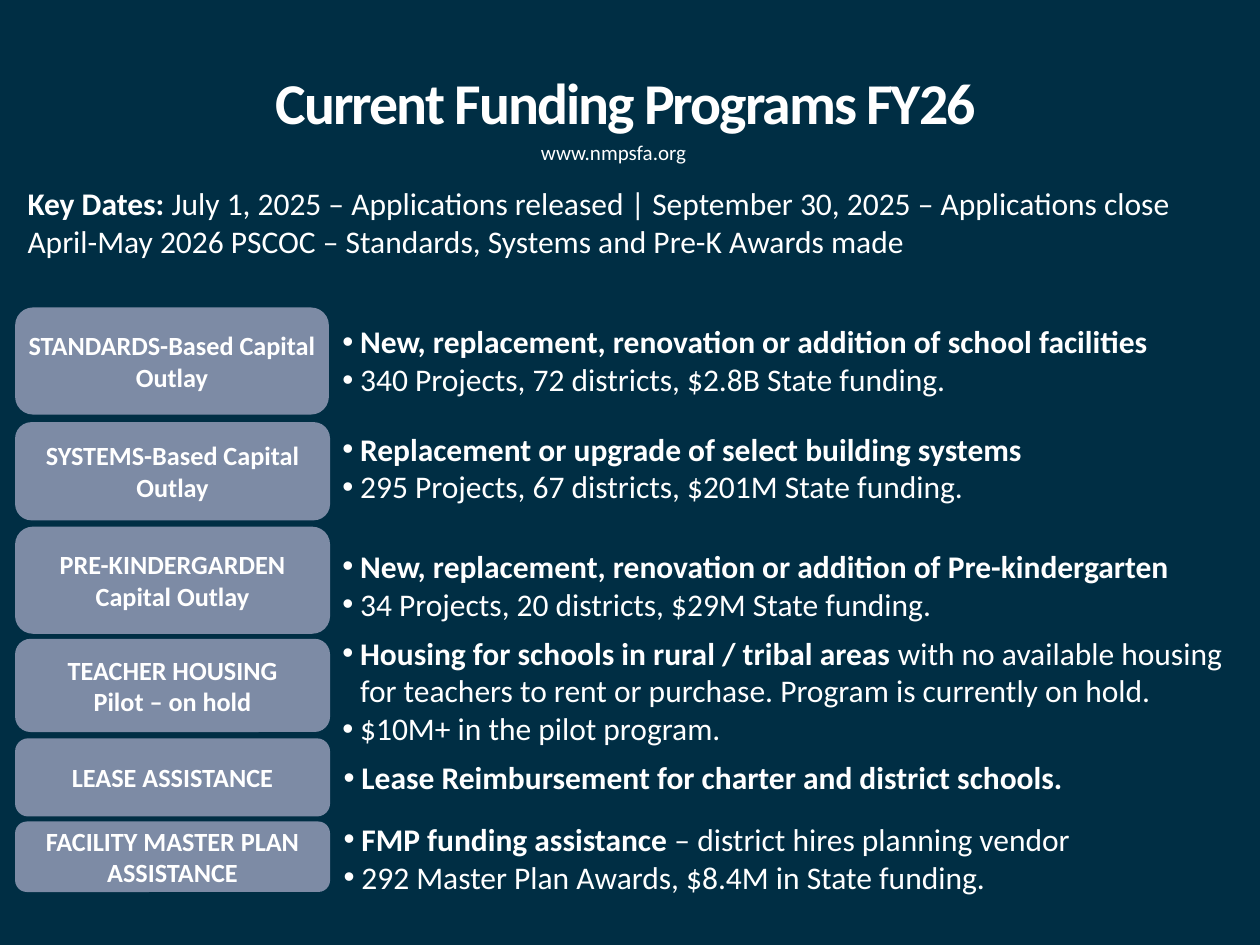
from lxml import etree
from pptx import Presentation
from pptx import util as u
from pptx.dml.color import RGBColor
from pptx.enum import shapes, text
from pptx.oxml.ns import qn

NAVY = RGBColor(0x00, 0x2E, 0x44)
SLATE = RGBColor(0x7D, 0x8B, 0xA5)
WHITE = RGBColor(0xFF, 0xFF, 0xFF)

CENTER = text.PP_ALIGN.CENTER
MIDDLE = text.MSO_ANCHOR.MIDDLE


def write(frame, paragraphs, size, align=None, bullet=False):
    """Fill a frame; each paragraph is a (bold text, regular text) pair."""
    frame.word_wrap = True
    for number, parts in enumerate(paragraphs):
        para = frame.paragraphs[0] if number == 0 else frame.add_paragraph()
        para.alignment = align
        if bullet:
            props = para._p.get_or_add_pPr()
            props.set("marL", str(u.Inches(0.14)))
            props.set("indent", str(u.Inches(-0.14)))
            color = etree.SubElement(props, qn("a:buClr"))
            etree.SubElement(color, qn("a:srgbClr")).set("val", str(WHITE))
            etree.SubElement(props, qn("a:buFont")).set("typeface", "Arial")
            etree.SubElement(props, qn("a:buChar")).set("char", "•")
        for words, bold in zip(parts, (True, False)):
            if not words:
                continue
            run = para.add_run()
            run.text = words
            style = {"name": "Calibri", "size": u.Pt(size), "bold": bold}
            for key, value in style.items():
                setattr(run.font, key, value)
            run.font.color.rgb = WHITE


def add_text(left, top, width, height, paragraphs, size, **layout):
    box = slide.shapes.add_textbox(*map(u.Inches, (left, top, width, height)))
    write(box.text_frame, paragraphs, size, **layout)
    return box.text_frame


deck = Presentation()
deck.slide_width, deck.slide_height = u.Inches(10), u.Inches(7.5)
slide = deck.slides.add_slide(deck.slide_layouts[6])
slide.background.fill.solid()
slide.background.fill.fore_color.rgb = NAVY

# Title, tightly tracked
title = add_text(0.7, 0.23, 8.63, 1.22, [("Current Funding Programs FY26", "")], 33, align=CENTER)
title.vertical_anchor = MIDDLE
title.margin_left = 0
title.paragraphs[0].line_spacing = 0.9
title.paragraphs[0].runs[0].font._element.set("spc", "-110")

# Web address and key dates
add_text(2.82, 1.06, 4.1, 0.3, [("", "www.nmpsfa.org")], 12, align=CENTER)
add_text(0.12, 1.41, 9.79, 0.71, [
    ("Key Dates: ", "July 1, 2025 – Applications released | September 30, 2025 – Applications close"),
    ("", "April-May 2026 PSCOC – Standards, Systems and Pre-K Awards made"),
], 18)

# Programs: label lines, label (top, width, height), details (left, top, width, height), bullets
programs = [
    (["STANDARDS-Based Capital Outlay"], (2.44, 2.49, 0.85), (2.62, 2.51, 7.06, 0.71),
     [("New, replacement, renovation or addition of school facilities", ""),
      ("", "340 Projects, 72 districts, $2.8B State funding.")]),
    (["SYSTEMS-Based Capital Outlay"], (3.35, 2.5, 0.78), (2.62, 3.36, 7.06, 0.91),
     [("Replacement or upgrade of select building systems", ""),
      ("", "295 Projects, 67 districts, $201M State funding.")]),
    (["PRE-KINDERGARDEN Capital Outlay"], (4.18, 2.5, 0.85), (2.62, 4.29, 7.06, 0.71),
     [("New, replacement, renovation or addition of Pre-kindergarten", ""),
      ("", "34 Projects, 20 districts, $29M State funding.")]),
    (["TEACHER HOUSING", "Pilot – on hold"], (5.07, 2.5, 0.74), (2.62, 4.98, 7.3, 1.01),
     [("Housing for schools in rural / tribal areas ",
       "with no available housing for teachers to rent or purchase. Program is currently on hold."),
      ("", "$10M+ in the pilot program.")]),
    (["LEASE ASSISTANCE"], (5.86, 2.5, 0.62), (2.63, 5.97, 6.83, 0.4),
     [("Lease Reimbursement for charter and district schools.", "")]),
    (["FACILITY MASTER PLAN ASSISTANCE"], (6.52, 2.5, 0.56), (2.63, 6.46, 6.83, 0.71),
     [("FMP funding assistance ", "– district hires planning vendor"),
      ("", "292 Master Plan Awards, $8.4M in State funding.")]),
]
label_format = {
    "margin_left": 0, "margin_right": 0,
    "margin_top": u.Inches(0.03), "margin_bottom": u.Inches(0.03),
    "vertical_anchor": MIDDLE,
}

for label_lines, label_place, details_place, bullets in programs:
    label = slide.shapes.add_shape(
        shapes.MSO_SHAPE.ROUNDED_RECTANGLE, *map(u.Inches, (0.12, *label_place)))
    label.shadow.inherit = False
    label.fill.solid()
    label.fill.fore_color.rgb = SLATE
    label.line.fill.background()
    for key, value in label_format.items():
        setattr(label.text_frame, key, value)
    write(label.text_frame, [(line, "") for line in label_lines], 15, align=CENTER)
    add_text(*details_place, bullets, 18, bullet=True)

deck.save("out.pptx")
